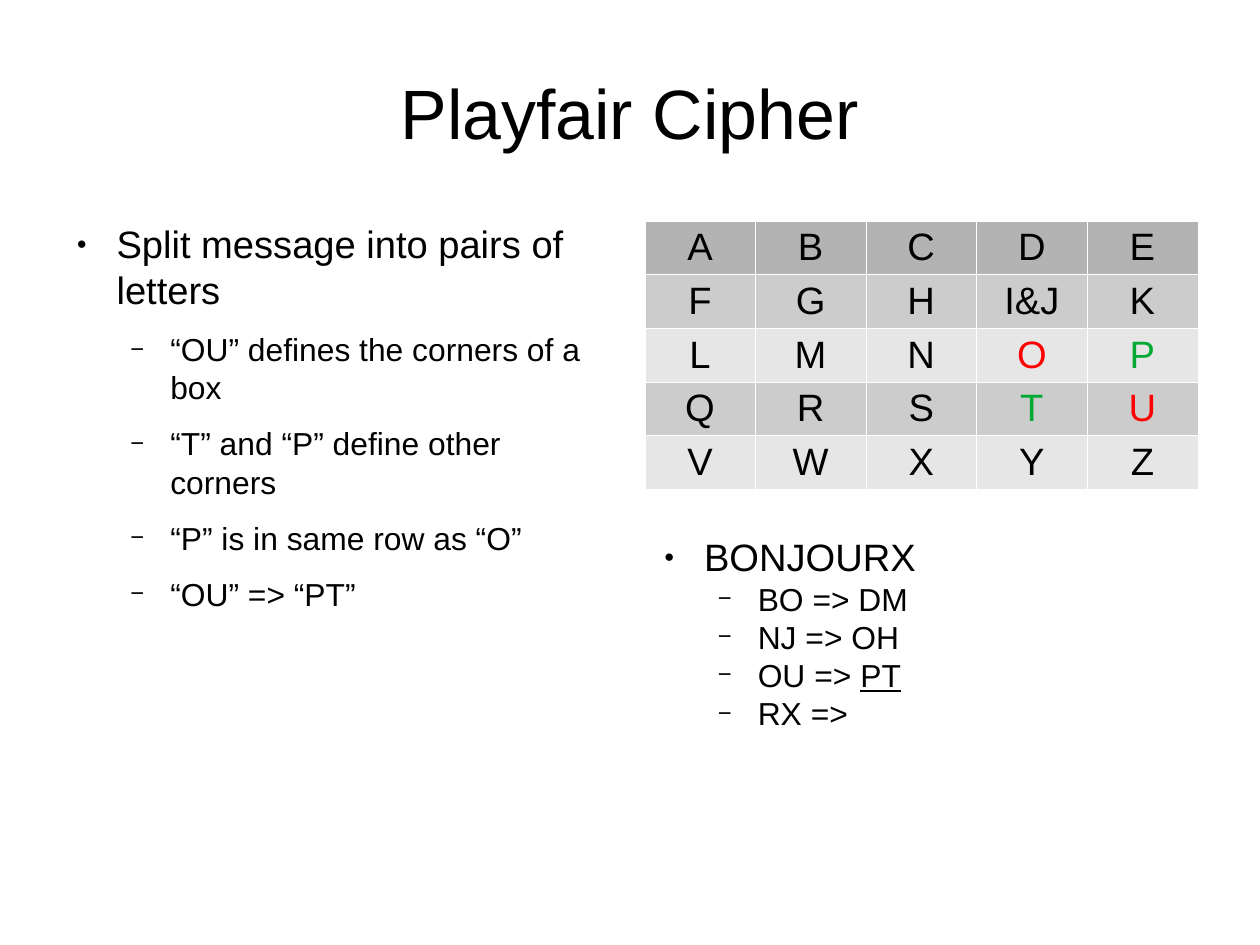
from dataclasses import dataclass

from lxml.etree import SubElement
from pptx import Presentation
from pptx.dml.color import RGBColor as RGB
from pptx.enum.text import MSO_ANCHOR as Anchor, PP_ALIGN as Align
from pptx.oxml.ns import qn
from pptx.util import Inches, Pt


@dataclass(frozen=True)
class Theme:
    font: str = "Arial"
    ink: str = "000000"
    red: str = "FF0000"
    green: str = "00A933"
    border: str = "FFFFFF"
    header: str = "B3B3B3"
    bands: tuple = ("CCCCCC", "E6E6E6")
    title_size: int = 44
    sizes: tuple = (24, 20)
    title_spacing: float = 0.9
    list_spacing: float = 1.0


THEME = Theme()

# The slide measures 28 by 21 centimetres
CM_PER_INCH = 2.54
SLIDE_SIZE = (28 / CM_PER_INCH, 21 / CM_PER_INCH)

# Per level: bullet sign, bullet size in percent, left indent in inches
BULLETS = (("●", 45, 0.47), ("−", 75, 0.94))
HANGING = 0.35

KEY_SQUARE = (
    ("A", "B", "C", "D", "E"),
    ("F", "G", "H", "I&J", "K"),
    ("L", "M", "N", "O", "P"),
    ("Q", "R", "S", "T", "U"),
    ("V", "W", "X", "Y", "Z"),
)
PAIR_COLORS = {"O": THEME.red, "U": THEME.red, "P": THEME.green, "T": THEME.green}

RULES = (
    (0, "Split message into pairs of letters"),
    (1, "“OU” defines the corners of a box"),
    (1, "“T” and “P” define other corners"),
    (1, "“P” is in same row as “O”"),
    (1, "“OU” => “PT”"),
)
EXAMPLE = (
    (0, "BONJOURX"),
    (1, "BO => DM"),
    (1, "NJ => OH"),
    (1, "OU => "),
    (1, "RX =>"),
)


def style_runs(paragraph, size, color=THEME.ink):
    for run in paragraph.runs:
        run.font.name = THEME.font
        run.font.size = Pt(size)
        run.font.color.rgb = RGB.from_string(color)


def add_frame(slide, box):
    frame = slide.shapes.add_textbox(*map(Inches, box)).text_frame
    frame.word_wrap = True
    frame.margin_left = frame.margin_right = 0
    frame.margin_top = frame.margin_bottom = 0
    return frame


def set_bullet(paragraph, level):
    sign, percent, indent = BULLETS[level]
    props = paragraph._p.get_or_add_pPr()
    props.set("marL", str(Inches(indent)))
    props.set("indent", str(-Inches(HANGING)))
    color = SubElement(props, qn("a:buClr"))
    SubElement(color, qn("a:srgbClr"), val=THEME.ink)
    SubElement(props, qn("a:buSzPct"), val=str(percent * 1000))
    SubElement(props, qn("a:buFont"), typeface=THEME.font)
    SubElement(props, qn("a:buChar"), char=sign)


def add_title(slide, box, wording):
    frame = add_frame(slide, box)
    frame.vertical_anchor = Anchor.MIDDLE
    frame.text = wording
    heading = frame.paragraphs[0]
    heading.alignment = Align.CENTER
    heading.line_spacing = THEME.title_spacing
    style_runs(heading, THEME.title_size)


def add_outline(slide, box, points, space_before):
    """Two-level bullet list; space_before holds the points for each level."""
    frame = add_frame(slide, box)
    frame.text = "\n".join(wording for _, wording in points)
    for paragraph, (level, _) in zip(frame.paragraphs, points):
        paragraph.level = level
        paragraph.line_spacing = THEME.list_spacing
        paragraph.space_before = Pt(space_before[level])
        set_bullet(paragraph, level)
        style_runs(paragraph, THEME.sizes[level])
    return frame


def add_example(slide, box):
    frame = add_outline(slide, box, EXAMPLE, (14.2, 0))
    # The encrypted pair is underlined
    pair = frame.paragraphs[3]
    pair.add_run().text = "PT"
    style_runs(pair, THEME.sizes[1])
    pair.runs[-1].font.underline = True


def set_borders(cell):
    props = cell._tc.get_or_add_tcPr()
    for position, side in enumerate(("lnL", "lnR", "lnT", "lnB")):
        line = props.makeelement(qn(f"a:{side}"), {"w": str(Pt(0.06))})
        fill = SubElement(line, qn("a:solidFill"))
        SubElement(fill, qn("a:srgbClr"), val=THEME.border)
        props.insert(position, line)


def add_key_square(slide, box, row_height):
    rows, columns = len(KEY_SQUARE), len(KEY_SQUARE[0])
    square = slide.shapes.add_table(rows, columns, *map(Inches, box)).table
    square.first_row = square.horz_banding = False
    for column in square.columns:
        column.width = Inches(box[2] / columns)
    for index, letters in enumerate(KEY_SQUARE):
        square.rows[index].height = Inches(row_height)
        shade = THEME.bands[(index - 1) % 2] if index else THEME.header
        for cell, letter in zip(square.rows[index].cells, letters):
            cell.text = letter
            cell.margin_top, cell.margin_bottom = Inches(0.05), Inches(0.02)
            cell.fill.solid()
            cell.fill.fore_color.rgb = RGB.from_string(shade)
            set_borders(cell)
            entry = cell.text_frame.paragraphs[0]
            entry.alignment = Align.CENTER
            style_runs(entry, THEME.sizes[0], PAIR_COLORS.get(letter, THEME.ink))


def main():
    deck = Presentation()
    deck.slide_width, deck.slide_height = map(Inches, SLIDE_SIZE)
    slide = deck.slides.add_slide(deck.slide_layouts[6])

    add_outline(slide, (0.55, 1.93, 4.82, 4.79), RULES, (14.2, 11.3))
    add_key_square(slide, (5.64, 1.93, 4.84, 2.51), row_height=0.38)
    add_title(slide, (0.55, 0.33, 9.92, 1.38), "Playfair Cipher")
    add_example(slide, (5.69, 4.67, 4.84, 2.29))

    deck.save("out.pptx")


if __name__ == "__main__":
    main()
